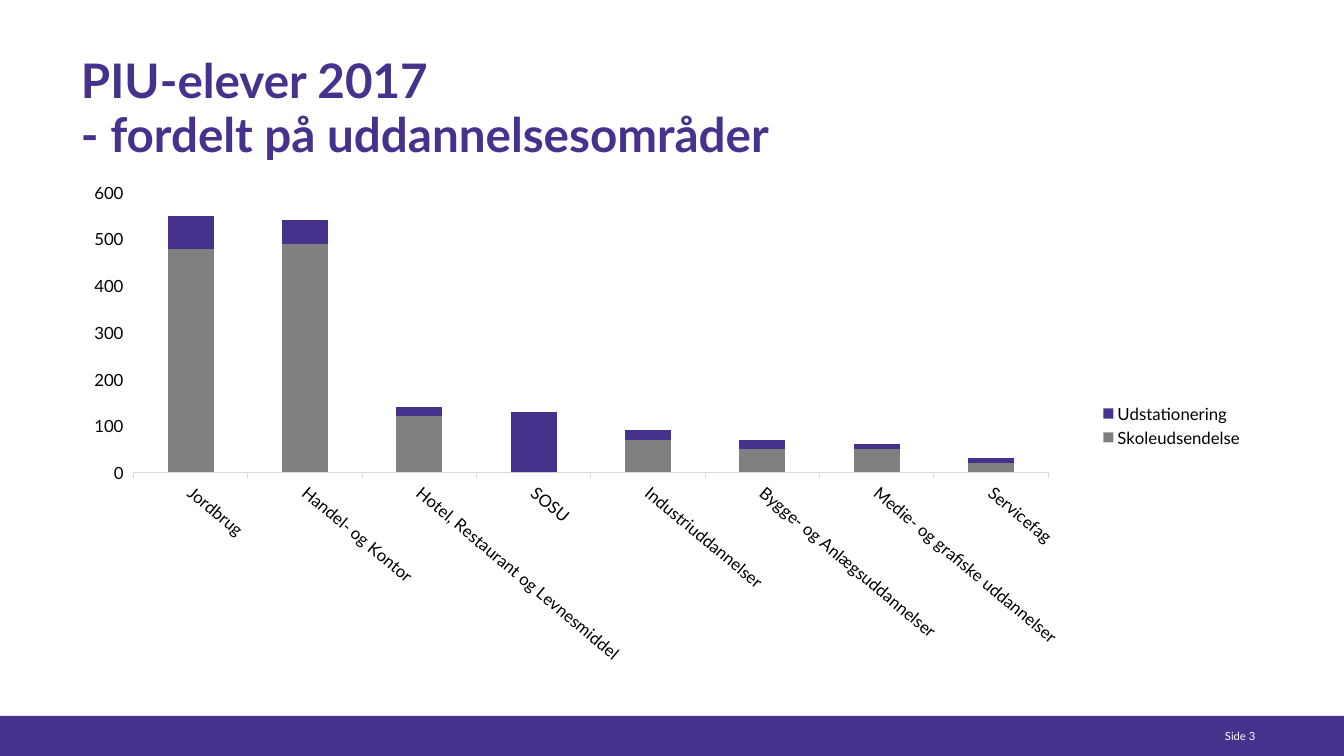
"""Build the slide on PIU students in 2017 by field of education."""
from lxml.etree import SubElement
from pptx import Presentation
from pptx.chart.data import CategoryChartData
from pptx.dml.color import RGBColor
from pptx.enum.chart import XL_CHART_TYPE, XL_LEGEND_POSITION, XL_TICK_MARK
from pptx.enum.shapes import MSO_SHAPE
from pptx.enum.text import MSO_ANCHOR, PP_ALIGN
from pptx.oxml.ns import qn
from pptx.util import Emu, Pt

EMU_PER_PX = 914400 / 100.8
FONT_NAME = "Lato"
PURPLE, GREY, LIGHT_GREY = "46328C", "808080", "D9D9D9"
BLACK, WHITE = "000000", "FFFFFF"
TITLE_LINES = ["PIU-elever 2017", "- fordelt på uddannelsesområder"]
FIELDS = [
    "Jordbrug",
    "Handel- og Kontor",
    "Hotel, Restaurant og Levnesmiddel",
    "SOSU",
    "Industriuddannelser",
    "Bygge- og Anlægsuddannelser",
    "Medie- og grafiske uddannelser",
    "Servicefag",
]
SERIES = [
    ("Skoleudsendelse", GREY, [480, 490, 120, 0, 70, 50, 50, 20]),
    ("Udstationering", PURPLE, [70, 50, 20, 130, 20, 20, 10, 10]),
]
PLOT_AREA = {"x": 0.052, "y": 0.035, "w": 0.774, "h": 0.559}
LABEL_DEGREES = 40


def px(length):
    """Turn pixels into EMU."""
    return Emu(round(length * EMU_PER_PX))


def color(hex_string):
    """Return the colour for a hex string."""
    return RGBColor.from_string(hex_string)


def style_font(font, size, hex_string, bold=False):
    """Set face, size, colour and weight of a font."""
    font.name = FONT_NAME
    font.size = Pt(size)
    font.bold = bold
    font.color.rgb = color(hex_string)


def prepare_frame(text_frame, anchor):
    """Remove the insets of a text frame and set its anchor."""
    text_frame.margin_left = text_frame.margin_right = 0
    text_frame.margin_top = text_frame.margin_bottom = 0
    text_frame.vertical_anchor = anchor
    text_frame.word_wrap = True


def add_title(slide, lines, left, top, width, height):
    """Place the title and fill it line by line."""
    title = slide.shapes.title
    title.left, title.top = px(left), px(top)
    title.width, title.height = px(width), px(height)
    prepare_frame(title.text_frame, MSO_ANCHOR.TOP)
    paragraph = title.text_frame.paragraphs[0]
    paragraph.alignment = PP_ALIGN.LEFT
    paragraph.line_spacing = 0.94
    for index, line in enumerate(lines):
        if index:
            paragraph.add_line_break()
        run = paragraph.add_run()
        run.text = line
        style_font(run.font, 34, PURPLE, bold=True)


def add_band(slide, left, top, width, height):
    """Add the purple footer band."""
    band = slide.shapes.add_shape(
        MSO_SHAPE.RECTANGLE, px(left), px(top), px(width), px(height))
    band.shadow.inherit = False
    band.fill.solid()
    band.fill.fore_color.rgb = color(PURPLE)
    band.line.fill.background()


def add_page_number(slide, text, left, top, width, height):
    """Add the page number on the footer band."""
    box = slide.shapes.add_textbox(px(left), px(top), px(width), px(height))
    prepare_frame(box.text_frame, MSO_ANCHOR.BOTTOM)
    run = box.text_frame.paragraphs[0].add_run()
    run.text = text
    style_font(run.font, 8, WHITE)


def fix_plot_area(chart):
    """Give the inner plot area its fixed place in the chart."""
    plot_area = chart.plots[0]._element.getparent()
    layout = plot_area.find(qn("c:layout"))
    if layout is None:
        layout = SubElement(plot_area, qn("c:layout"))
        plot_area.insert(0, layout)
    manual = SubElement(layout, qn("c:manualLayout"))
    settings = {"layoutTarget": "inner", "xMode": "edge", "yMode": "edge"}
    for name, value in {**settings, **PLOT_AREA}.items():
        SubElement(manual, qn(f"c:{name}")).set("val", str(value))


def style_axes(chart):
    """Format both axes and slant the category labels."""
    for axis in (chart.category_axis, chart.value_axis):
        axis.has_major_gridlines = False
        axis.major_tick_mark = XL_TICK_MARK.OUTSIDE
        axis.minor_tick_mark = XL_TICK_MARK.NONE
        style_font(axis.tick_labels.font, 12, BLACK)
    category_line = chart.category_axis.format.line
    category_line.color.rgb = color(LIGHT_GREY)
    category_line.width = Pt(0.75)
    body = chart.category_axis._element.find(qn("c:txPr")).find(qn("a:bodyPr"))
    body.set("rot", str(LABEL_DEGREES * 60000))
    body.set("vert", "horz")
    chart.value_axis.format.line.fill.background()
    chart.value_axis.minimum_scale = 0
    chart.value_axis.maximum_scale = 600
    chart.value_axis.major_unit = 100


def add_student_chart(slide, left, top, width, height):
    """Add the stacked columns of students by field."""
    data = CategoryChartData()
    data.categories = FIELDS
    for name, _, values in SERIES:
        data.add_series(name, values)
    chart = slide.shapes.add_chart(
        XL_CHART_TYPE.COLUMN_STACKED,
        px(left), px(top), px(width), px(height), data).chart
    style_font(chart.font, 10, BLACK)
    chart.has_title = False
    plot = chart.plots[0]
    plot.vary_by_categories = False
    plot.gap_width = 150
    plot.overlap = 100
    for series, (_, fill_color, _) in zip(plot.series, SERIES):
        series.format.fill.solid()
        series.format.fill.fore_color.rgb = color(fill_color)
    chart.has_legend = True
    chart.legend.position = XL_LEGEND_POSITION.RIGHT
    chart.legend.include_in_layout = False
    style_font(chart.legend.font, 12, BLACK)
    style_axes(chart)
    fix_plot_area(chart)


def main():
    """Build and save the presentation."""
    presentation = Presentation()
    presentation.slide_width, presentation.slide_height = px(1344), px(756)
    slide = presentation.slides.add_slide(presentation.slide_layouts[5])
    add_band(slide, 0, 716, 1344, 40)
    add_title(slide, TITLE_LINES, 81, 56, 1182, 103)
    add_student_chart(slide, 72, 175, 1182, 501)
    add_page_number(slide, "Side 3", 1225, 723, 49, 20)
    presentation.save("out.pptx")


if __name__ == "__main__":
    main()
